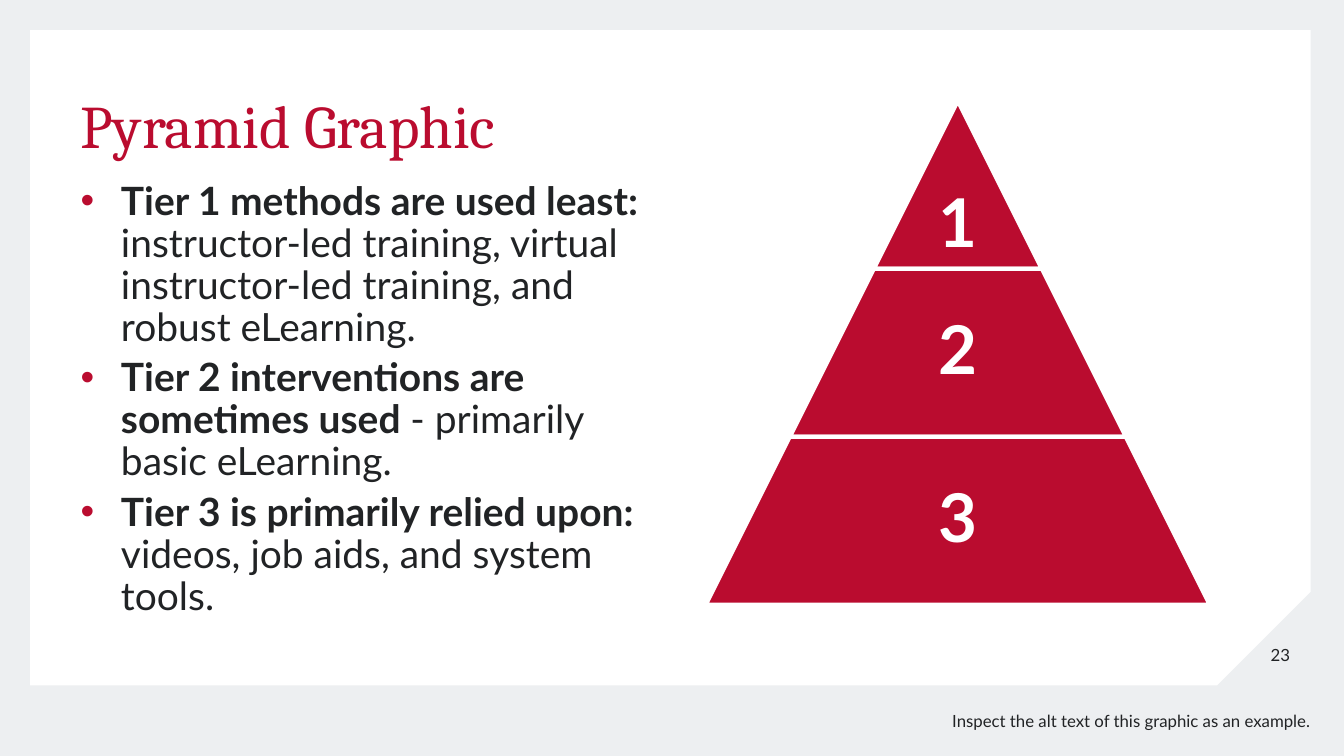
from dataclasses import dataclass

from lxml import etree
from pptx import Presentation
from pptx.dml.color import RGBColor
from pptx.enum.shapes import MSO_SHAPE
from pptx.enum.text import MSO_ANCHOR, MSO_AUTO_SIZE, PP_ALIGN
from pptx.oxml.ns import qn
from pptx.util import Inches, Pt

SNIP = MSO_SHAPE.SNIP_1_RECTANGLE
TIER = MSO_SHAPE.TRAPEZOID
LEFT, MID, RIGHT = PP_ALIGN.LEFT, PP_ALIGN.CENTER, PP_ALIGN.RIGHT
TOP, CENTER, BASE = MSO_ANCHOR.TOP, MSO_ANCHOR.MIDDLE, MSO_ANCHOR.BOTTOM
FIXED = MSO_AUTO_SIZE.NONE


@dataclass(frozen=True)
class Theme:
    red: RGBColor = RGBColor(0xBA, 0x0C, 0x2F)
    ink: RGBColor = RGBColor(0x21, 0x23, 0x25)
    white: RGBColor = RGBColor(0xFF, 0xFF, 0xFF)
    gray: RGBColor = RGBColor(0xED, 0xEF, 0xF1)
    head: str = "Cambria"
    font: str = "Lato"
    title: float = 43.2
    body: float = 27.8
    tier: float = 48
    note: float = 12


class Deck:
    def __init__(self, theme, slide):
        self.theme = theme
        self.slide = slide
        fill = slide.background.fill
        fill.solid()
        fill.fore_color.rgb = theme.gray

    def frame(self, shape, anchor, inset):
        frame = shape.text_frame
        frame.word_wrap = True
        frame.auto_size = FIXED
        frame.vertical_anchor = anchor
        left, top, right, base = (Inches(n) for n in inset)
        frame.margin_left, frame.margin_top = left, top
        frame.margin_right, frame.margin_bottom = right, base
        return frame

    def run(self, para, text, size, color, bold=False, font=None):
        run = para.add_run()
        run.text = text
        run.font.name = font or self.theme.font
        run.font.size = Pt(size)
        run.font.bold = bold
        run.font.color.rgb = color

    def shape(self, kind, box, color, adjust):
        shape = self.slide.shapes.add_shape(kind, *map(Inches, box))
        shape.shadow.inherit = False
        shape.adjustments[0] = adjust
        shape.fill.solid()
        shape.fill.fore_color.rgb = color
        return shape

    def panel(self, box):
        panel = self.shape(SNIP, box, self.theme.white, 0.143)
        panel.line.fill.background()
        node = panel._element
        node.spPr.find(qn("a:xfrm")).set("flipV", "1")
        node.getparent().insert(2, node)

    def title(self, text, box):
        title = self.slide.shapes.title
        title.left, title.top, title.width, title.height = map(Inches, box)
        para = self.frame(title, BASE, (0.5, 0.3, 0.5, 0)).paragraphs[0]
        para.alignment = LEFT
        para.line_spacing = 0.9
        self.run(para, text, self.theme.title, self.theme.red, font=self.theme.head)

    def label(self, text, box, anchor, align, inset, size, color, bold=False):
        label = self.slide.shapes.add_textbox(*map(Inches, box))
        para = self.frame(label, anchor, inset).paragraphs[0]
        para.alignment = align
        para.line_spacing = 0.9 if bold else 1.0
        self.run(para, text, size, color, bold)

    def bullet(self, para):
        props = para._p.get_or_add_pPr()
        props.set("marL", str(Inches(0.4)))
        props.set("indent", str(Inches(-0.4)))
        color = etree.SubElement(props, qn("a:buClr"))
        etree.SubElement(color, qn("a:srgbClr"), val=str(self.theme.red))
        etree.SubElement(props, qn("a:buFont"), typeface="Arial")
        etree.SubElement(props, qn("a:buChar"), char="•")

    def points(self, items, box):
        body = self.slide.shapes.add_textbox(*map(Inches, box))
        frame = self.frame(body, TOP, (0.5, 0.2, 0.5, 0.3))
        for i, (lead, rest) in enumerate(items):
            para = frame.add_paragraph() if i else frame.paragraphs[0]
            self.bullet(para)
            para.line_spacing = 0.9
            para.space_before = Pt(3 if i else 0)
            para.space_after = Pt(3)
            self.run(para, lead, self.theme.body, self.theme.ink, True)
            self.run(para, rest, self.theme.body, self.theme.ink)

    def pyramid(self, count, mid, top, side):
        step = side / count
        for i in range(count):
            wide = step * (i + 1)
            y = top + step * i
            tier = self.shape(TIER, (mid - wide / 2, y, wide, step), self.theme.red, 0.5)
            tier.line.color.rgb = self.theme.white
            tier.line.width = Pt(3)
            span = wide * 0.65 if i else wide
            self.label(str(i + 1), (mid - span / 2, y, span, step),
                       CENTER if i else BASE, MID, (0.07,) * 4,
                       self.theme.tier, self.theme.white, True)


def main():
    show = Presentation()
    show.slide_width, show.slide_height = Inches(13.33), Inches(7.5)
    theme = Theme()
    deck = Deck(theme, show.slides.add_slide(show.slide_layouts[5]))
    deck.panel((0.3, 0.3, 12.7, 6.5))
    deck.title("Pyramid Graphic", (0.3, 0.3, 6.7, 1.3))
    deck.points([
        ("Tier 1 methods are used least: ",
         "instructor-led training, virtual instructor-led training, and robust eLearning."),
        ("Tier 2 interventions are sometimes used ", "- primarily basic eLearning."),
        ("Tier 3 is primarily relied upon: ", "videos, job aids, and system tools."),
    ], (0.3, 1.6, 6.7, 5.2))
    deck.pyramid(3, 9.5, 1, 5)
    deck.label("23", (12.4, 6.2, 0.6, 0.6), CENTER, MID, (0.1,) * 4,
               theme.note, theme.ink)
    deck.label("Inspect the alt text of this graphic as an example.",
               (4, 6.8, 9, 0.7), CENTER, RIGHT, (0, 0.1, 0, 0.1),
               theme.note, theme.ink)
    show.save("out.pptx")


if __name__ == "__main__":
    main()
